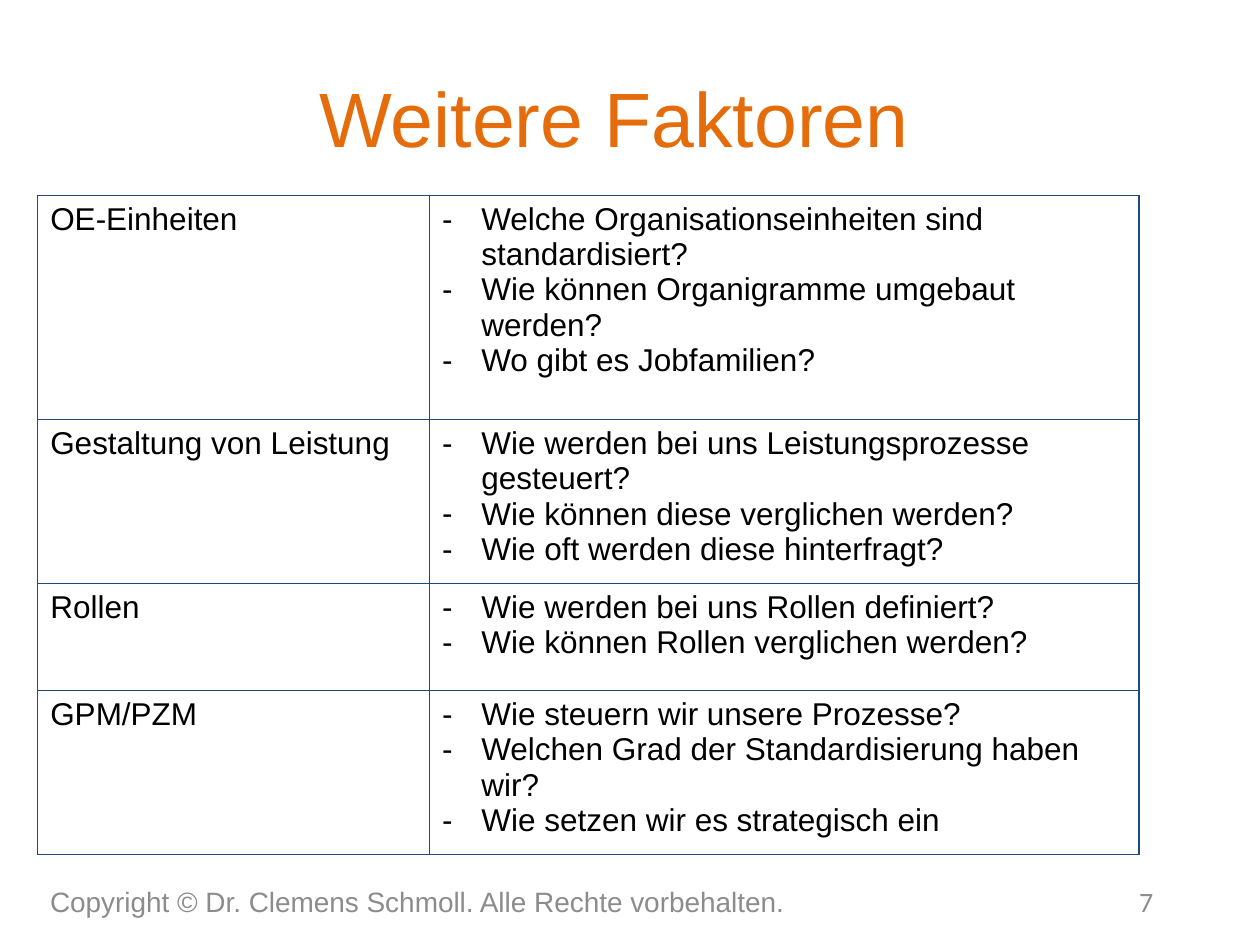
from lxml.etree import SubElement
from pptx import Presentation
from pptx.dml.color import RGBColor
from pptx.enum.text import MSO_ANCHOR as Anchor, PP_ALIGN as Align
from pptx.oxml.ns import qn
from pptx.util import Cm, Pt

ORANGE = RGBColor(0xE4, 0x6C, 0x0A)
NAVY = RGBColor(0x1F, 0x49, 0x7D)
GRAY = RGBColor(0x8C, 0x8C, 0x8C)
BLACK = RGBColor(0, 0, 0)

COLUMN_WIDTHS = (7.9, 14.3)
FACTORS = [
    ("OE-Einheiten", 4.52, [
        "Welche Organisationseinheiten sind standardisiert?",
        "Wie können Organigramme umgebaut werden?",
        "Wo gibt es Jobfamilien?"]),
    ("Gestaltung von Leistung", 3.1, [
        "Wie werden bei uns Leistungsprozesse gesteuert?",
        "Wie können diese verglichen werden?",
        "Wie oft werden diese hinterfragt?"]),
    ("Rollen", 2.16, [
        "Wie werden bei uns Rollen definiert?",
        "Wie können Rollen verglichen werden?"]),
    ("GPM/PZM", 3.1, [
        "Wie steuern wir unsere Prozesse?",
        "Welchen Grad der Standardisierung haben wir?",
        "Wie setzen wir es strategisch ein"]),
]


def add_dash(para, indent=Cm(0.79)):
    props = para._p.get_or_add_pPr()
    props.set("marL", str(indent))
    props.set("indent", str(-indent))
    SubElement(props, qn("a:buFont"), typeface="Arial")
    SubElement(props, qn("a:buChar"), char="-")


def write(frame, lines, size=18, font="Arial", color=BLACK,
          align=Align.LEFT, dashed=False):
    for index, line in enumerate(lines):
        para = frame.add_paragraph() if index else frame.paragraphs[0]
        para.alignment = align
        if dashed:
            add_dash(para)
        span = para.add_run()
        span.text = line
        span.font.size = Pt(size)
        span.font.name = font
        span.font.color.rgb = color


def add_text(page, text, left, top, width, height, **text_format):
    box = page.shapes.add_textbox(Cm(left), Cm(top), Cm(width), Cm(height))
    frame = box.text_frame
    frame.word_wrap = True
    frame.vertical_anchor = Anchor.MIDDLE
    write(frame, [text], **text_format)


def style_cell(cell):
    """Clear the fill and draw a thin navy border on all four sides."""
    cell.fill.background()
    props = cell._tc.get_or_add_tcPr()
    for position, side in enumerate(("lnL", "lnR", "lnT", "lnB")):
        line = SubElement(props, qn(f"a:{side}"), w=str(Pt(1)))
        fill = SubElement(line, qn("a:solidFill"))
        SubElement(fill, qn("a:srgbClr"), val=str(NAVY))
        props.insert(position, line)


def add_factor_table(page, left, top):
    height = sum(row_height for _, row_height, _ in FACTORS)
    table = page.shapes.add_table(
        len(FACTORS), len(COLUMN_WIDTHS), Cm(left), Cm(top),
        Cm(sum(COLUMN_WIDTHS)), Cm(height)).table
    table.first_row = table.horz_banding = False
    for column, width in zip(table.columns, COLUMN_WIDTHS):
        column.width = Cm(width)
    for row, (factor, row_height, questions) in zip(table.rows, FACTORS):
        row.height = Cm(row_height)
        name_cell, question_cell = row.cells
        write(name_cell.text_frame, [factor])
        write(question_cell.text_frame, questions, dashed=True)
        for cell in (name_cell, question_cell):
            style_cell(cell)


def add_footer(page, left, top, width, height):
    number_width = 5.92
    add_text(page, "Copyright © Dr. Clemens Schmoll. Alle Rechte vorbehalten.",
             left, top, 16.15, height, size=16, color=GRAY)
    add_text(page, "7", left + width - number_width, top, number_width, height,
             size=16, font="Calibri", color=GRAY, align=Align.RIGHT)


def main():
    deck = Presentation()
    deck.slide_width, deck.slide_height = Cm(25.4), Cm(19.05)
    page = deck.slides.add_slide(deck.slide_layouts[6])
    add_text(page, "Weitere Faktoren", 1.27, 0.76, 22.23, 3.18,
             size=44, color=ORANGE, align=Align.CENTER)
    add_factor_table(page, 0.76, 3.94)
    add_footer(page, 0.76, 17.65, 22.74, 1.02)
    deck.save("out.pptx")


if __name__ == "__main__":
    main()
